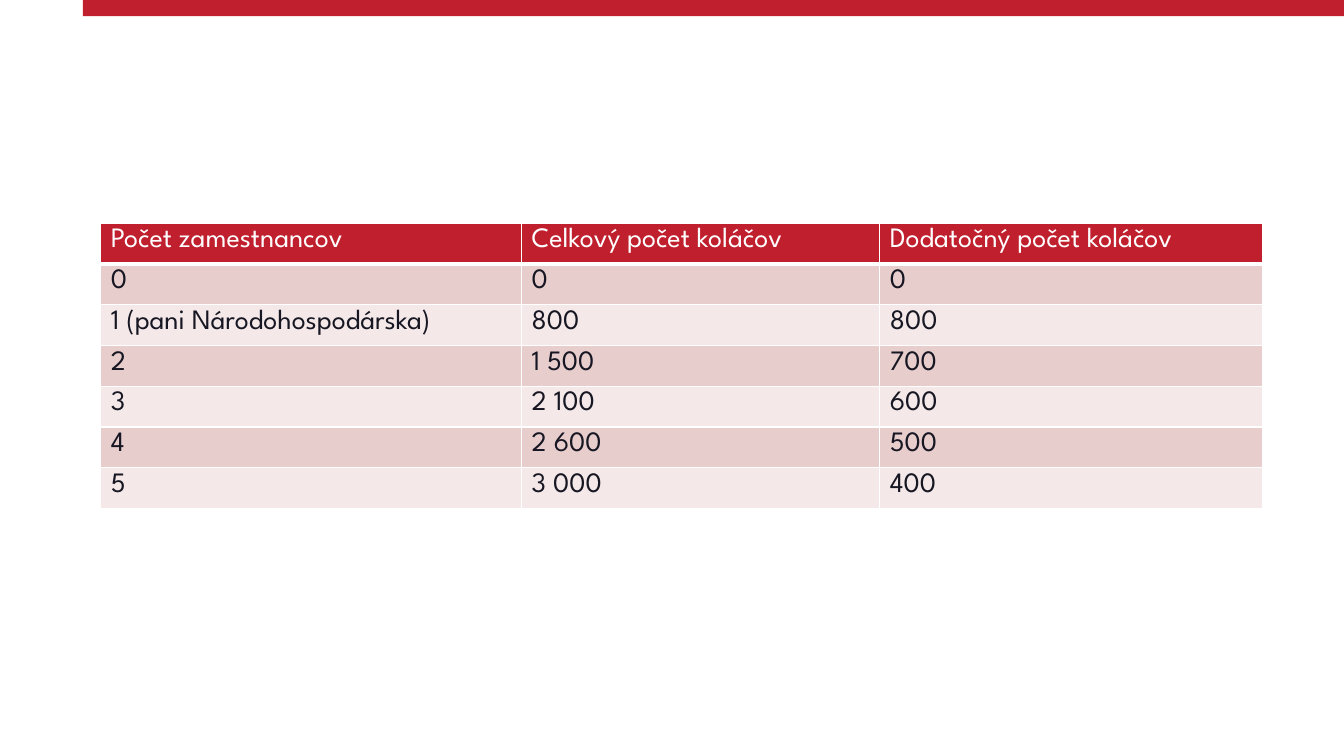
from dataclasses import dataclass

from lxml import etree
from pptx import Presentation
from pptx import util as u
from pptx.dml.color import RGBColor
from pptx.enum import shapes
from pptx.oxml import ns
from pptx.slide import Slide
from pptx.table import _Cell

COLORS = {
    "red": "C0202E",
    "rose": "E8CDCD",
    "blush": "F4E8E8",
    "ink": "171723",
    "white": "FFFFFF",
}
SLIDE_WIDTH, SLIDE_HEIGHT = 960, 540
BAR_LEFT, BAR_HEIGHT = 59.2, 11.6
TABLE_LEFT, TABLE_TOP = 72, 159.3
COLUMN_WIDTHS = (300.6, 255.8, 273.4)
ROW_HEIGHT = 29.15

CAKE_ROWS = (
    ("Počet zamestnancov", "Celkový počet koláčov", "Dodatočný počet koláčov"),
    ("0", "0", "0"),
    ("1 (pani Národohospodárska)", "800", "800"),
    ("2", "1 500", "700"),
    ("3", "2 100", "600"),
    ("4", "2 600", "500"),
    ("5", "3 000", "400"),
)


@dataclass(frozen=True)
class RowStyle:
    fill: str
    text: str
    bottom_border: float = 1


HEADER = RowStyle("red", "white", 3)
BANDS = (RowStyle("rose", "ink"), RowStyle("blush", "ink"))


def rgb(name: str) -> RGBColor:
    return RGBColor.from_string(COLORS[name])


def add_borders(cell: _Cell, bottom_width: float) -> None:
    """Add white borders; call before filling, as the schema puts lines first."""
    properties = cell._tc.get_or_add_tcPr()
    widths = {"a:lnL": 1, "a:lnR": 1, "a:lnT": 1, "a:lnB": bottom_width}
    for tag, width in widths.items():
        line = etree.SubElement(properties, ns.qn(tag), w=str(u.Pt(width)))
        fill = etree.SubElement(line, ns.qn("a:solidFill"))
        etree.SubElement(fill, ns.qn("a:srgbClr"), val=COLORS["white"])


def format_cell(cell: _Cell, content: str, style: RowStyle) -> None:
    add_borders(cell, style.bottom_border)
    cell.fill.solid()
    cell.fill.fore_color.rgb = rgb(style.fill)
    run = cell.text_frame.paragraphs[0].add_run()
    run.text = content
    font_format = {"name": "League Spartan", "size": u.Pt(20), "bold": False}
    for attribute, value in font_format.items():
        setattr(run.font, attribute, value)
    run.font.color.rgb = rgb(style.text)


def add_top_bar(slide: Slide) -> None:
    bar = slide.shapes.add_shape(
        shapes.MSO_SHAPE.RECTANGLE,
        u.Pt(BAR_LEFT), u.Pt(0), u.Pt(SLIDE_WIDTH - BAR_LEFT), u.Pt(BAR_HEIGHT),
    )
    bar.shadow.inherit = False
    bar.fill.solid()
    bar.fill.fore_color.rgb = rgb("red")
    bar.line.fill.background()


def add_cake_table(slide: Slide) -> None:
    table = slide.shapes.add_table(
        len(CAKE_ROWS), len(COLUMN_WIDTHS),
        u.Pt(TABLE_LEFT), u.Pt(TABLE_TOP),
        u.Pt(sum(COLUMN_WIDTHS)), u.Pt(ROW_HEIGHT * len(CAKE_ROWS)),
    ).table
    for column, width in zip(table.columns, COLUMN_WIDTHS):
        column.width = u.Pt(width)
    for index, (row, contents) in enumerate(zip(table.rows, CAKE_ROWS)):
        row.height = u.Pt(ROW_HEIGHT)
        style = BANDS[(index - 1) % 2] if index else HEADER
        for cell, content in zip(row.cells, contents):
            format_cell(cell, content, style)


def main() -> None:
    presentation = Presentation()
    presentation.slide_width = u.Pt(SLIDE_WIDTH)
    presentation.slide_height = u.Pt(SLIDE_HEIGHT)
    slide = presentation.slides.add_slide(presentation.slide_layouts[6])
    add_top_bar(slide)
    add_cake_table(slide)
    presentation.save("out.pptx")


if __name__ == "__main__":
    main()
